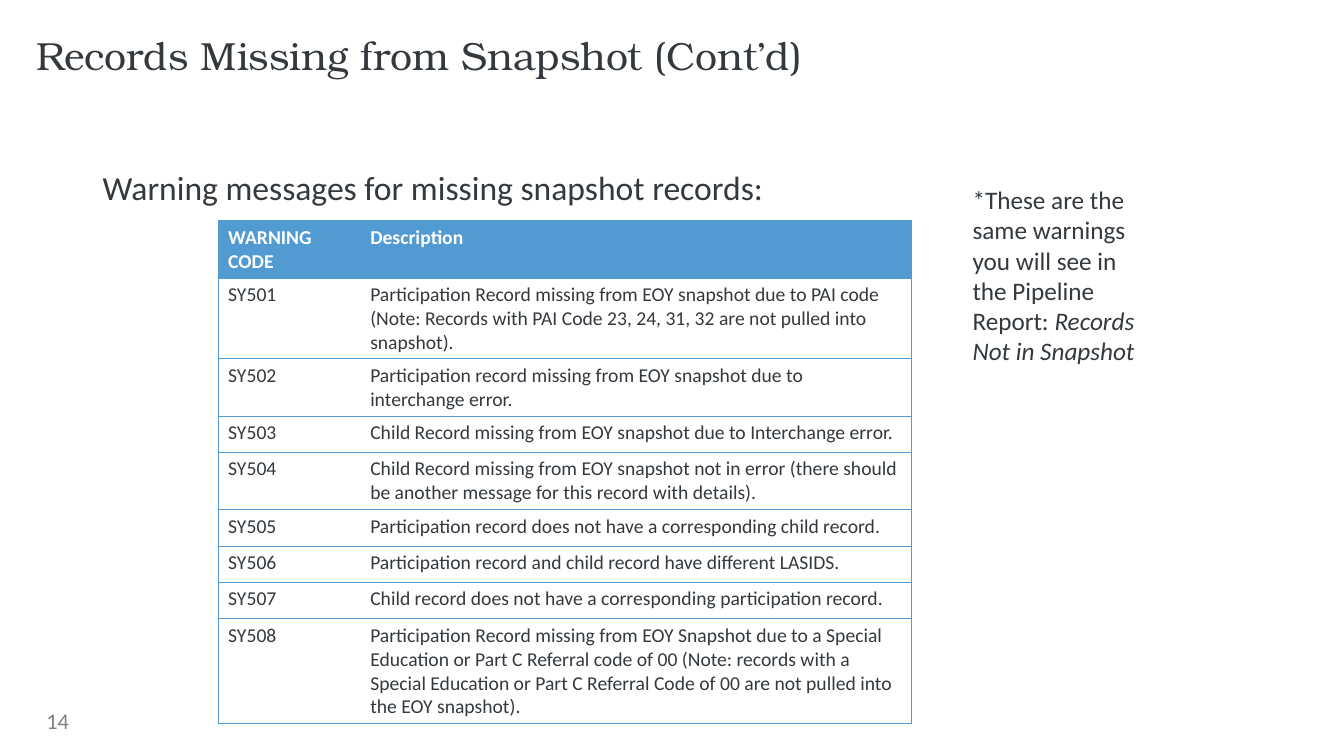
from lxml import etree
from pptx import Presentation
from pptx.dml.color import RGBColor
from pptx.enum import text
from pptx.oxml import ns
from pptx.util import Pt

INK, BLUE, WHITE, GREY = "33393E", "519AD2", "FFFFFF", "808080"
BODY_FONT, TITLE_FONT = "Calibri", "TeX Gyre Bonum"

HEADINGS = ("WARNING CODE", "Description")
WARNINGS = [
    ("SY501", "Participation Record missing from EOY snapshot due to PAI code "
     "(Note: Records with PAI Code 23, 24, 31, 32 are not pulled into snapshot)."),
    ("SY502", "Participation record missing from EOY snapshot due to interchange error."),
    ("SY503", "Child Record missing from EOY snapshot due to Interchange error."),
    ("SY504", "Child Record missing from EOY snapshot not in error (there should be "
     "another message for this record with details)."),
    ("SY505", "Participation record does not have a corresponding child record."),
    ("SY506", "Participation record and child record have different LASIDS."),
    ("SY507", "Child record does not have a corresponding participation record."),
    ("SY508", "Participation Record missing from EOY Snapshot due to a Special Education "
     "or Part C Referral code of 00 (Note: records with a Special Education or Part C "
     "Referral Code of 00 are not pulled into the EOY snapshot)."),
]
COLUMN_WIDTHS = (101.5, 393.8)
ROW_HEIGHTS = (38, 54, 38, 26, 38, 26, 26, 26, 70)


def colour(hex_value):
    return RGBColor.from_string(hex_value)


def style(paragraph, size, ink=INK, face=BODY_FONT, bold=False):
    font = paragraph.font
    font.name, font.size, font.bold = face, Pt(size), bold
    font.color.rgb = colour(ink)


def add_text(slide, box, runs, size, ink=INK, face=BODY_FONT, middle=False, inset=True):
    """Add a one-paragraph text box; runs are (wording, italic) pairs."""
    frame = slide.shapes.add_textbox(*map(Pt, box)).text_frame
    frame.word_wrap = True
    if middle:
        frame.vertical_anchor = text.MSO_ANCHOR.MIDDLE
    if not inset:
        frame.margin_left = frame.margin_right = frame.margin_top = frame.margin_bottom = 0
    paragraph = frame.paragraphs[0]
    for wording, italic in runs:
        run = paragraph.add_run()
        run.text = wording
        if italic:
            run.font.italic = True
    style(paragraph, size, ink, face)
    return paragraph


def set_borders(cell, outer_side):
    """Rule the top, bottom and outer side of a cell, and leave its inner side open."""
    properties = cell._tc.get_or_add_tcPr()
    for side in ("L", "R", "T", "B"):
        line = etree.SubElement(properties, ns.qn(f"a:ln{side}"), w=str(Pt(0.5)))
        if side in (outer_side, "T", "B"):
            fill = etree.SubElement(line, ns.qn("a:solidFill"))
            etree.SubElement(fill, ns.qn("a:srgbClr"), val=BLUE)
        else:
            etree.SubElement(line, ns.qn("a:noFill"))


def add_warning_table(slide, left, top):
    rows = [HEADINGS, *WARNINGS]
    table = slide.shapes.add_table(
        len(rows), len(HEADINGS), Pt(left), Pt(top),
        Pt(sum(COLUMN_WIDTHS)), Pt(sum(ROW_HEIGHTS))).table
    table.horz_banding = False
    for column, width in zip(table.columns, COLUMN_WIDTHS):
        column.width = Pt(width)
    for row, height in zip(table.rows, ROW_HEIGHTS):
        row.height = Pt(height)

    for r, wordings in enumerate(rows):
        is_heading = r == 0
        for c, wording in enumerate(wordings):
            cell = table.cell(r, c)
            cell.text = wording
            set_borders(cell, "LR"[c])
            cell.fill.solid()
            cell.fill.fore_color.rgb = colour(BLUE if is_heading else WHITE)
            style(cell.text_frame.paragraphs[0], 14,
                  WHITE if is_heading else INK, bold=is_heading)


def main():
    deck = Presentation()
    deck.slide_width, deck.slide_height = Pt(960), Pt(540)
    slide = deck.slides.add_slide(deck.slide_layouts[6])

    # Title and lead-in
    title = add_text(slide, (26, 6, 635, 70.5), [("Records Missing from Snapshot (Cont’d)", False)],
                     28, face=TITLE_FONT, middle=True, inset=False)
    lead_in = add_text(slide, (69.8, 122.4, 828, 34),
                       [("Warning messages for missing snapshot records:", False)],
                       24, inset=False)
    title.line_spacing = lead_in.line_spacing = 0.9
    lead_in._p.get_or_add_pPr().set("marL", str(Pt(3.6)))

    # Warning codes
    add_warning_table(slide, 155.8, 157.7)

    # Side note
    add_text(slide, (687.6, 128.2, 143.3, 138.2),
             [("*These are the same warnings you will see in the Pipeline Report: ", False),
              ("Records Not in Snapshot", True)], 18)

    # Page number
    add_text(slide, (26, 500.4, 216, 28.8), [("14", False)], 16, GREY, middle=True)

    deck.save("out.pptx")


if __name__ == "__main__":
    main()
